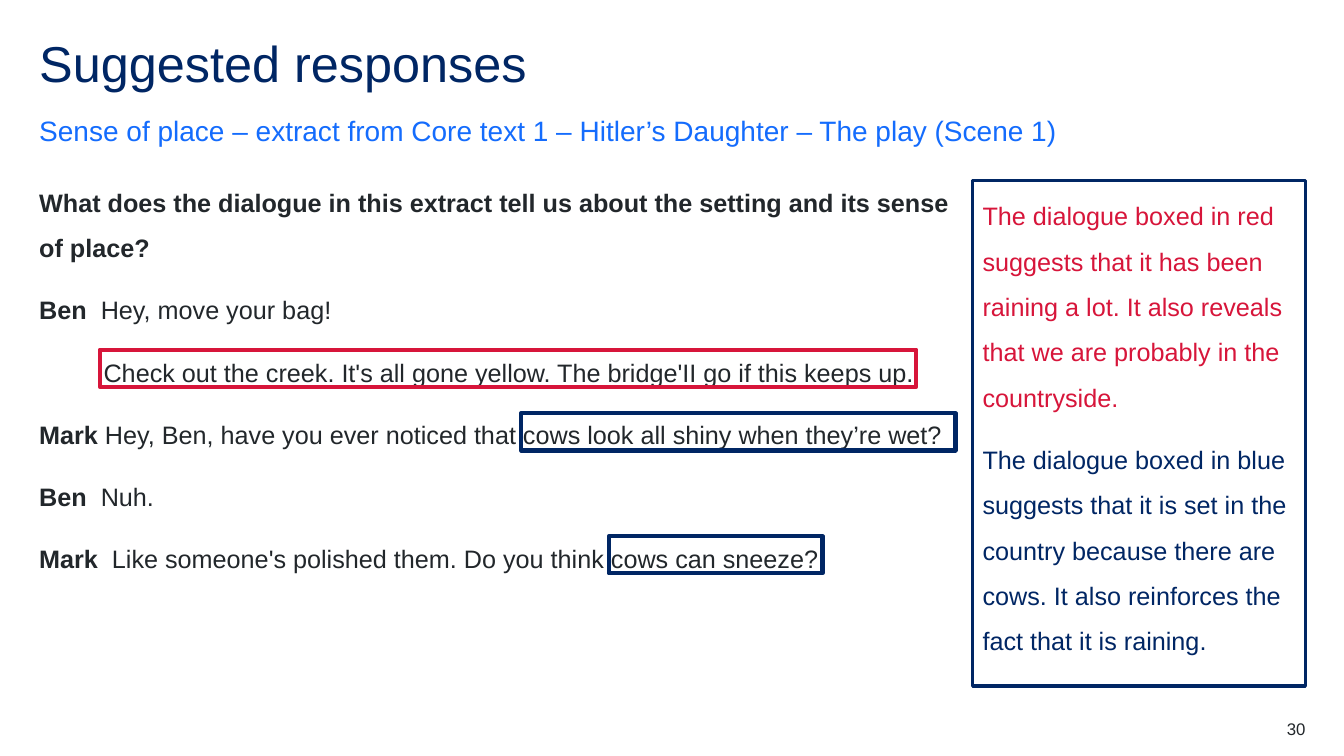
from pptx import Presentation
from pptx.dml.color import RGBColor
from pptx.enum.shapes import MSO_SHAPE as Shape
from pptx.enum.text import MSO_ANCHOR as Anchor, PP_ALIGN as Align
from pptx.util import Pt

NAVY, BLUE, RED, INK, WHITE = "002664", "146CFD", "D7153A", "22272B", "FFFFFF"
LEFT, RIGHT = 28, 932.5
FULL_WIDTH = RIGHT - LEFT
INDENT = 46
MARK_HEIGHT = 26.6

TITLE = "Suggested responses"
SUBTITLE = "Sense of place – extract from Core text 1 – Hitler’s Daughter – The play (Scene 1)"
QUESTION = "What does the dialogue in this extract tell us about the setting and its sense of place?"
DIALOGUE = [
    ("Ben", "  Hey, move your bag!"),
    ("", "Check out the creek. It's all gone yellow. The bridge'II go if this keeps up."),
    ("Mark", " Hey, Ben, have you ever noticed that cows look all shiny when they’re wet?"),
    ("Ben", "  Nuh."),
    ("Mark", "  Like someone's polished them. Do you think cows can sneeze?"),
]
MARKS = [
    (71.3, 249.8, 583.2, RED),
    (372.2, 295.2, 310.3, NAVY),
    (434.9, 383, 152.6, NAVY),
]
RESPONSES = [
    ("The dialogue boxed in red suggests that it has been raining a lot. "
     "It also reveals that we are probably in the countryside.", RED),
    ("The dialogue boxed in blue suggests that it is set in the country because there are cows. "
     "It also reinforces the fact that it is raining.", NAVY),
]
PAGE_NUMBER = "30"


def color(code):
    return RGBColor.from_string(code)


def add_text_box(page, left, top, width, height, anchor=Anchor.TOP):
    frame = page.shapes.add_textbox(Pt(left), Pt(top), Pt(width), Pt(height)).text_frame
    frame.word_wrap = True
    frame.vertical_anchor = anchor
    frame.margin_left = frame.margin_right = frame.margin_top = frame.margin_bottom = 0
    return frame


def add_outline(page, left, top, width, height, line, weight):
    box = page.shapes.add_shape(Shape.RECTANGLE, Pt(left), Pt(top), Pt(width), Pt(height))
    box.shadow.inherit = False
    box.fill.background()
    box.line.color.rgb = color(line)
    box.line.width = Pt(weight)
    return box


def write(frame, paragraphs, size, spacing=1.5, after=12, align=Align.LEFT):
    for index, spans in enumerate(paragraphs):
        para = frame.add_paragraph() if index else frame.paragraphs[0]
        para.alignment = align
        para.line_spacing = spacing
        para.space_after = Pt(after)
        for text, code, bold in spans:
            span = para.add_run()
            span.text = text
            span.font.name = "Arial"
            span.font.size = Pt(size)
            span.font.bold = bold
            span.font.color.rgb = color(code)


deck = Presentation()
deck.slide_width, deck.slide_height = Pt(960), Pt(540)
page = deck.slides.add_slide(deck.slide_layouts[6])

title = add_text_box(page, LEFT, 28, FULL_WIDTH, 43)
write(title, [[(TITLE, NAVY, False)]], 36, 0.9, 0)

subtitle = add_text_box(page, LEFT, 77, FULL_WIDTH, 28, Anchor.BOTTOM)
write(subtitle, [[(SUBTITLE, BLUE, False)]], 20)

extract = add_text_box(page, LEFT, 123, 666.7, 379)
lines = [[(QUESTION, INK, True)]]
for speaker, speech in DIALOGUE:
    name = [(speaker, INK, True)] if speaker else []
    lines.append(name + [(speech, INK, False)])
write(extract, lines, 18)
for para, (speaker, speech) in zip(extract.paragraphs[1:], DIALOGUE):
    if not speaker:
        properties = para._p.get_or_add_pPr()
        properties.set("marL", str(Pt(INDENT)))
        properties.set("indent", "0")

for left, top, width, line in MARKS:
    add_outline(page, left, top, width, MARK_HEIGHT, line, 3)

answer = add_outline(page, 694.8, 129, 237.7, 361, NAVY, 2.25)
answer.fill.solid()
answer.fill.fore_color.rgb = color(WHITE)
answer.text_frame.word_wrap = True
answer.text_frame.vertical_anchor = Anchor.TOP
write(answer.text_frame, [[(text, code, False)] for text, code in RESPONSES], 18)

number = add_text_box(page, RIGHT - 57, 513.3, 57, 14.4)
write(number, [[(PAGE_NUMBER, INK, False)]], 12, 1, 0, Align.RIGHT)

deck.save("out.pptx")
